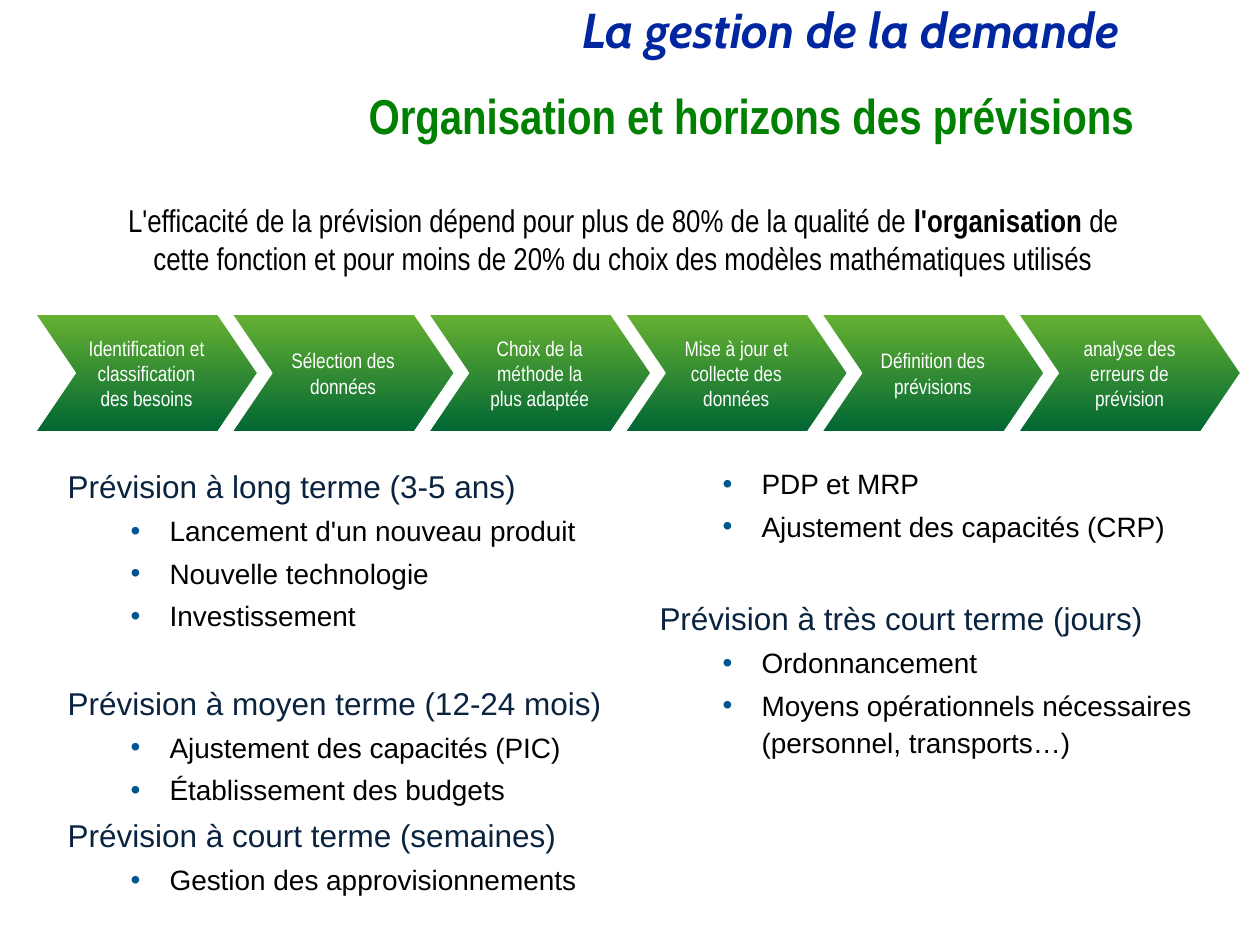
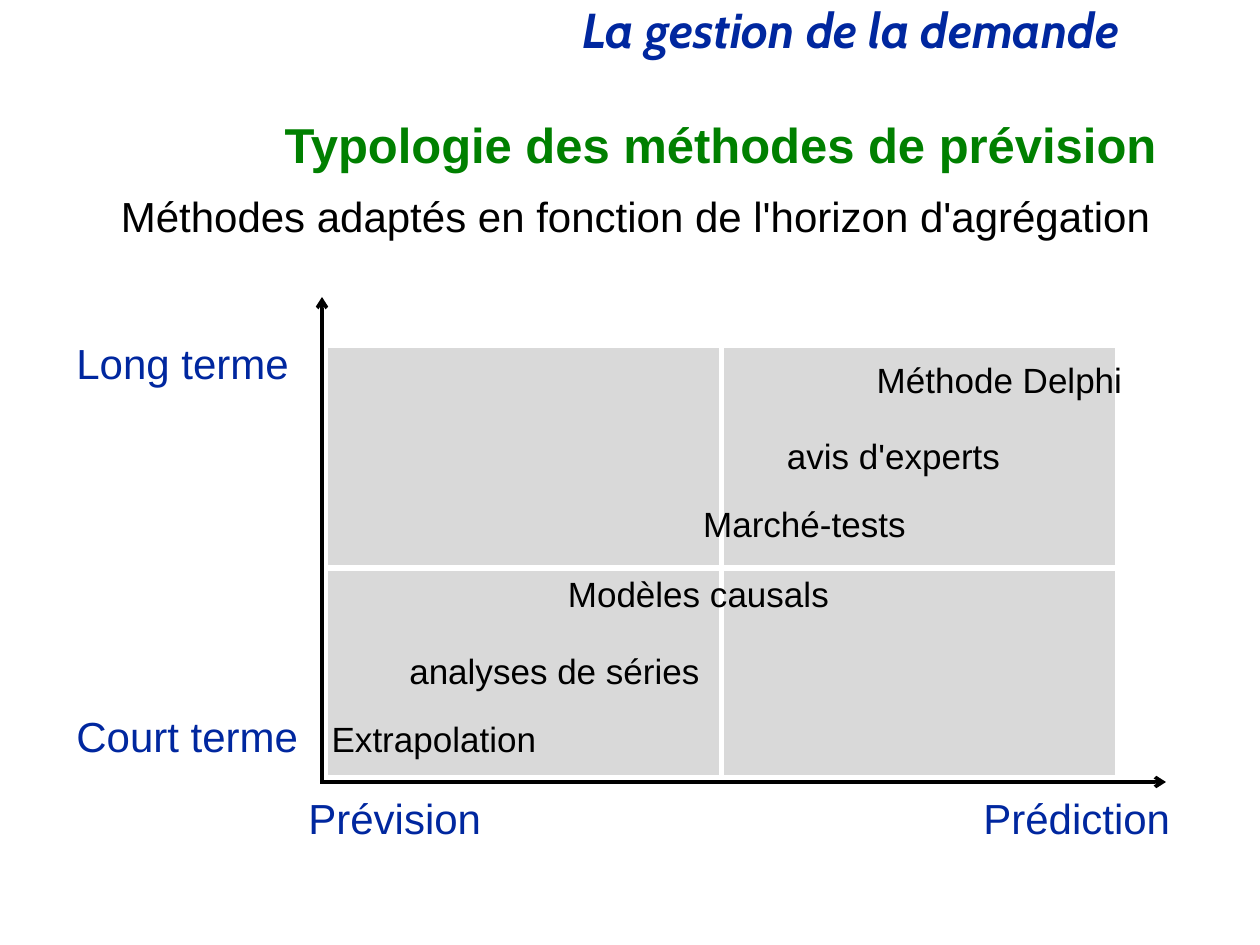
import pptx
import pptx.util
import pptx.dml.color
import pptx.enum.shapes
import pptx.enum.text
import pptx.oxml
import pptx.oxml.ns
from lxml import etree

ALIGN = pptx.enum.text.PP_ALIGN
ANCHOR = pptx.enum.text.MSO_ANCHOR
AUTO = pptx.enum.text.MSO_AUTO_SIZE
SHAPE = pptx.enum.shapes.MSO_SHAPE
STRAIGHT = pptx.enum.shapes.MSO_CONNECTOR.STRAIGHT
qn = pptx.oxml.ns.qn

# Shared look
PX = 914400 / 126
BLUE, GREEN, BLACK, WHITE = "00279F", "008000", "000000", "FFFFFF"
NAVY, BULLET, GREY = "0A233F", "005490", "D9D9D9"
CHEVRON_TOP, CHEVRON_BOTTOM = "66B132", "006633"
BAND = "La gestion de la demande"

# Slide 1 content
ORGANISATION = "Organisation et horizons des prévisions"
INTRO = [
    ("L'efficacité de la prévision dépend pour plus de 80% de la qualité de ", False),
    ("l'organisation", True),
    (" de cette fonction et pour moins de 20% du choix des modèles "
     "mathématiques utilisés", False),
]
STEPS = [
    "Identification et classification des besoins",
    "Sélection des données",
    "Choix de la méthode la plus adaptée",
    "Mise à jour et collecte des données",
    "Définition des prévisions",
    "analyse des erreurs de prévision",
]
# heading, space before in points, bullets
HORIZONS = [
    ("Prévision à long terme (3-5 ans)", 3.5,
     ["Lancement d'un nouveau produit", "Nouvelle technologie", "Investissement"]),
    ("Prévision à moyen terme (12-24 mois)", 27,
     ["Ajustement des capacités (PIC)", "Établissement des budgets"]),
    ("Prévision à court terme (semaines)", 3.5,
     ["Gestion des approvisionnements", "PDP et MRP",
      "Ajustement des capacités (CRP)"]),
    ("Prévision à très court terme (jours)", 30,
     ["Ordonnancement",
      "Moyens opérationnels nécessaires (personnel, transports…)"]),
]
ITEM_GAP = 3.2

# Slide 2 content
TYPOLOGIE = "Typologie des méthodes de prévision"
SUBTITLE = "Méthodes adaptés en fonction de l'horizon d'agrégation"
# text, box in px, line spacing
METHODS = [
    ("Méthode Delphi", (863, 352, 273, 54), 1.0),
    ("avis d'experts", (772, 428, 243, 54), 1.0),
    ("Marché-tests", (690, 504, 229, 47), 0.8),
    ("Modèles causals", (554, 574, 289, 47), 0.8),
    ("analyses de séries", (394, 643, 321, 54), 1.0),
    ("Extrapolation", (318, 719, 232, 47), 0.8),
]
AXIS_LABELS = [
    ("Long terme", (64, 331, 239, 63)),
    ("Court terme", (64, 704, 249, 63)),
    ("Prévision", (296, 786, 200, 63)),
    ("Prédiction", (971, 786, 214, 63)),
]
AXES = [(322, 784, 322, 297), (322, 782, 1166, 782)]
MATRIX = (325, 345, 793, 433)
HORIZON_SPLIT = 568


def px(*values):
    return [pptx.util.Emu(round(v * PX)) for v in values]


def rgb(color):
    return pptx.dml.color.RGBColor.from_string(color)


def write(p, text, size=18, font="Arial", color=BLACK, bold=False, italic=False,
          align=None, spacing=1.0, before=0):
    """Add one formatted run and set the format of its paragraph."""
    r = p.add_run()
    r.text = text
    r.font.size, r.font.name = pptx.util.Pt(size), font
    r.font.bold, r.font.italic = bold, italic
    r.font.color.rgb = rgb(color)
    p.alignment, p.line_spacing = align, spacing
    p.space_before = pptx.util.Pt(before)


def add_box(s, box, wrap=False):
    sp = s.shapes.add_textbox(*px(*box))
    tf = sp.text_frame
    tf.word_wrap, tf.auto_size = wrap, AUTO.SHAPE_TO_FIT_TEXT
    return sp


def place(sp, box, anchor):
    """Move a placeholder and return its text frame."""
    sp.left, sp.top, sp.width, sp.height = px(*box)
    tf = sp.text_frame
    tf.word_wrap, tf.auto_size, tf.vertical_anchor = True, AUTO.NONE, anchor
    return tf


def add_title(s, text, box, font):
    tf = place(s.shapes.title, box, ANCHOR.TOP)
    write(tf.paragraphs[0], text, size=28, font=font, color=GREEN, bold=True,
          align=ALIGN.RIGHT, spacing=0.9)


def add_band(prs, s):
    """Build the band on a slide, then move it to the master all slides share."""
    sp = add_box(s, (570, 0, 660, 67))
    write(sp.text_frame.paragraphs[0], BAND, size=28, font="Cabin", color=BLUE,
          bold=True, italic=True, spacing=0.9)
    sp.element.nvSpPr.cNvPr.set("id", "20")
    prs.slide_master.shapes.element.append(sp.element)


def set_bullet(p, char=None):
    pPr = p._p.get_or_add_pPr()
    left, indent = px(102, -39) if char else (0, 0)
    pPr.set("marL", str(left))
    pPr.set("indent", str(indent))
    if not char:
        etree.SubElement(pPr, qn("a:buNone"))
        return
    color = etree.SubElement(pPr, qn("a:buClr"))
    etree.SubElement(color, qn("a:srgbClr"), val=BULLET)
    etree.SubElement(pPr, qn("a:buFont"), typeface="Arial")
    etree.SubElement(pPr, qn("a:buChar"), char=char)


def add_line(s, ends, color, width, arrow=False):
    line = s.shapes.add_connector(STRAIGHT, *px(*ends))
    line.line.color.rgb, line.line.width = rgb(color), pptx.util.Pt(width)
    if arrow:
        etree.SubElement(line.line._get_or_add_ln(), qn("a:tailEnd"), type="arrow")
    etree.SubElement(line.element.spPr, qn("a:effectLst"))
    return line


def add_shape(s, kind, box, line_width):
    sp = s.shapes.add_shape(kind, *px(*box))
    sp.shadow.inherit = False
    sp.line.color.rgb, sp.line.width = rgb(WHITE), pptx.util.Pt(line_width)
    return sp


def add_steps(s, left=35, right=1241, top=314, width=223, height=118):
    pitch = (right - left - width) / (len(STEPS) - 1)
    for i, step in enumerate(STEPS):
        sp = add_shape(s, SHAPE.CHEVRON, (left + i * pitch, top, width, height), 1)
        sp.adjustments[0] = 0.34
        sp.fill.gradient()
        sp.fill.gradient_angle = 270
        stops = zip(sp.fill.gradient_stops, (CHEVRON_TOP, CHEVRON_BOTTOM), (0, 1))
        for stop, color, position in stops:
            stop.color.rgb, stop.position = rgb(color), position
        tf = sp.text_frame
        tf.word_wrap, tf.vertical_anchor = True, ANCHOR.MIDDLE
        write(tf.paragraphs[0], step, size=12, font="Arial Narrow", color=WHITE,
              align=ALIGN.CENTER)


def add_horizons(s):
    tf = place(s.placeholders[1], (55, 452, 1160, 456), ANCHOR.MIDDLE)
    bodyPr = tf._txBody.bodyPr
    bodyPr.set("numCol", "2")
    bodyPr.set("spcCol", str(px(49)[0]))
    p = tf.paragraphs[0]
    for heading, gap, items in HORIZONS:
        if p is None:
            p = tf.add_paragraph()
        write(p, heading, color=NAVY, spacing=1.1, before=gap)
        set_bullet(p)
        for item in items:
            p = tf.add_paragraph()
            p.level = 1
            write(p, item, size=16, spacing=1.1, before=ITEM_GAP)
            set_bullet(p, "•")
        p = None


def build_organisation(prs):
    s = prs.slides.add_slide(prs.slide_layouts[1])
    add_band(prs, s)
    add_title(s, ORGANISATION, (12, 86, 1134, 79), "Arial Narrow")
    add_horizons(s)
    p = add_box(s, (104, 195, 1038, 89), wrap=True).text_frame.paragraphs[0]
    for text, bold in INTRO:
        write(p, text, font="Arial Narrow", bold=bold, align=ALIGN.CENTER)
    add_steps(s)


def build_typologie(prs):
    s = prs.slides.add_slide(prs.slide_layouts[5])
    add_title(s, TYPOLOGIE, (35, 115, 1134, 118), "Arial")

    # Matrix and its dividing lines
    left, top, width, height = MATRIX
    matrix = add_shape(s, SHAPE.RECTANGLE, MATRIX, 3)
    matrix.fill.solid()
    matrix.fill.fore_color.rgb = rgb(GREY)
    middle = left + width / 2
    divider = add_line(s, (middle, top, middle, top + height), WHITE, 3)
    divider.begin_connect(matrix, 0)
    divider.end_connect(matrix, 2)
    add_line(s, (left, HORIZON_SPLIT, left + width, HORIZON_SPLIT), WHITE, 3)

    # Axes
    for ends in AXES:
        add_line(s, ends, BLACK, 2, arrow=True)

    # Labels
    sp = add_box(s, (40, 184, 1191, 63), wrap=True)
    write(sp.text_frame.paragraphs[0], SUBTITLE, size=24, align=ALIGN.CENTER)
    for text, box, spacing in METHODS:
        write(add_box(s, box).text_frame.paragraphs[0], text, size=20,
              align=ALIGN.CENTER, spacing=spacing)
    for text, box in AXIS_LABELS:
        write(add_box(s, box).text_frame.paragraphs[0], text, size=24, color=BLUE)


def main():
    prs = pptx.Presentation()
    prs.slide_width, prs.slide_height = px(1260, 945)
    build_organisation(prs)
    build_typologie(prs)
    prs.save("out.pptx")


if __name__ == "__main__":
    main()
